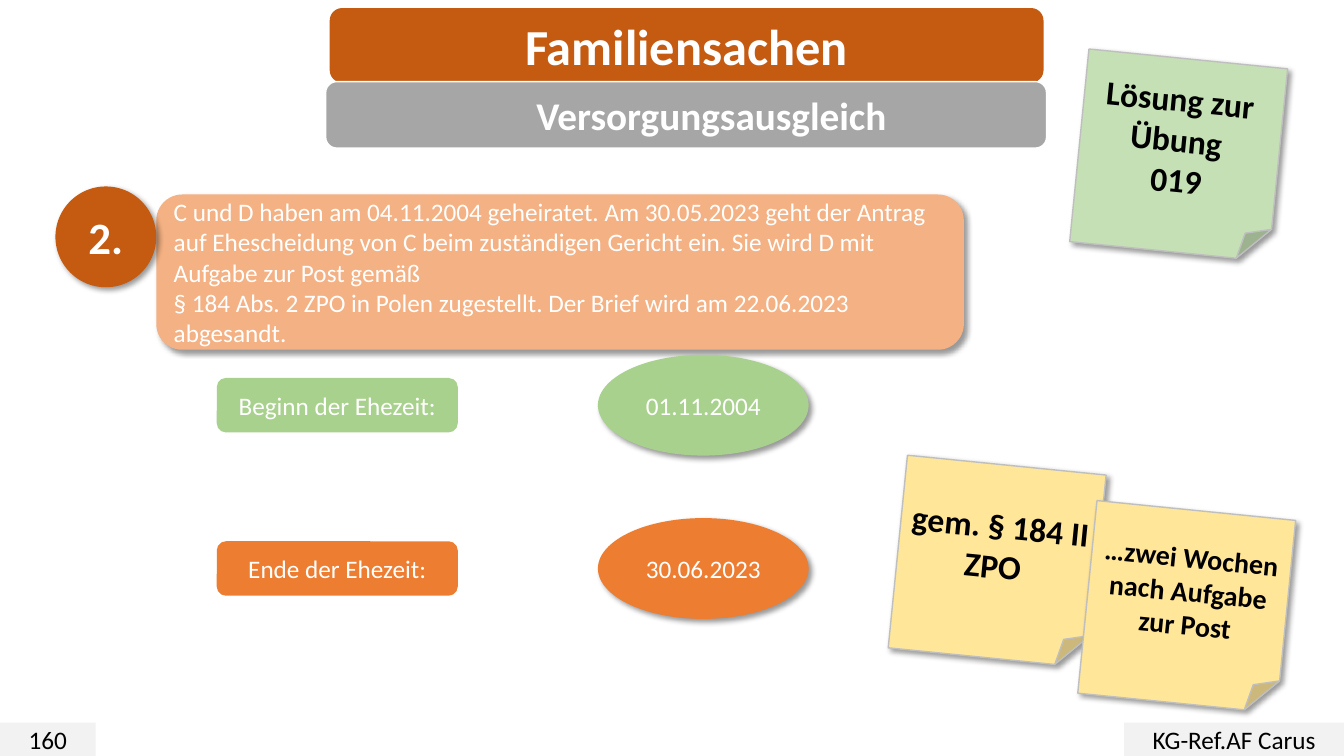
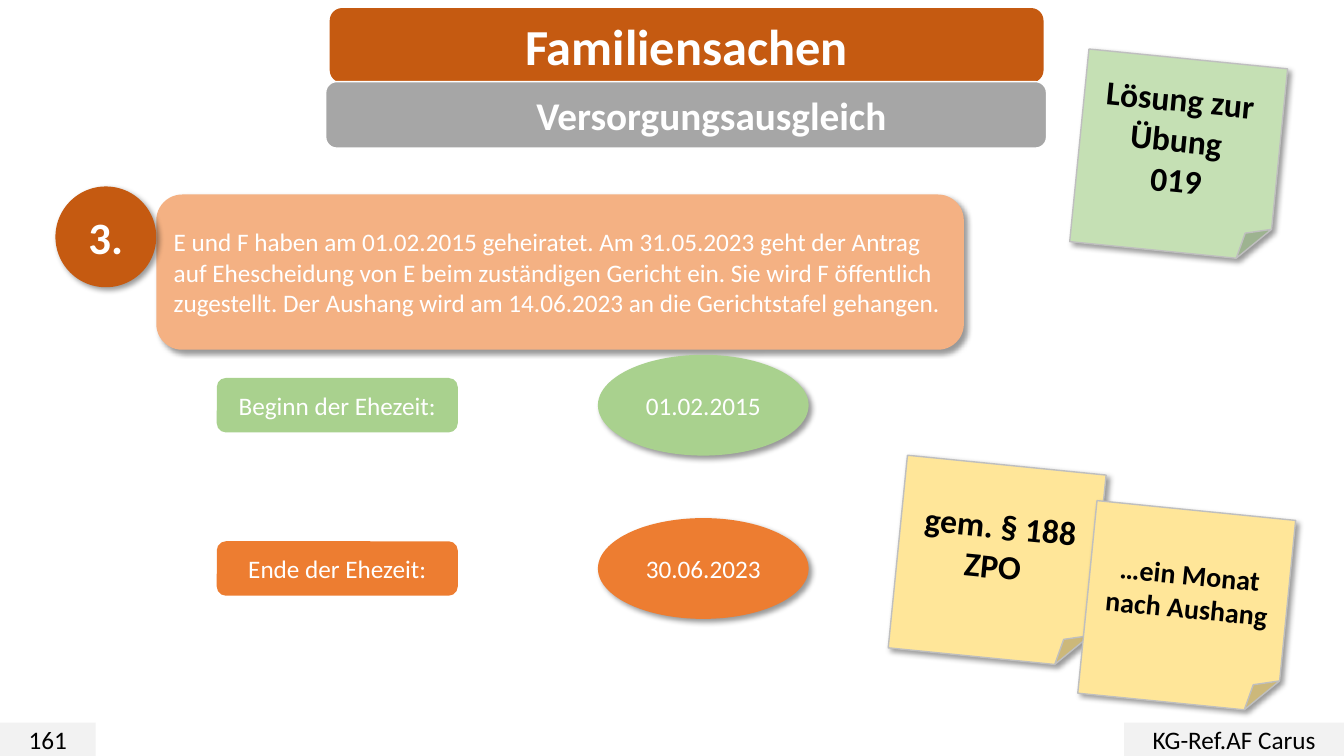
from lxml.etree import SubElement as Sub
from pptx import Presentation as Deck
from pptx.dml.color import RGBColor as RGB
from pptx.enum.shapes import MSO_SHAPE as Kind
from pptx.enum.text import MSO_ANCHOR as Anchor, PP_ALIGN as Align
from pptx.oxml.ns import qn
from pptx.util import Inches, Pt

WHITE = RGB(0xFF, 0xFF, 0xFF)
BLACK = RGB(0x00, 0x00, 0x00)
RUST = RGB(0xC5, 0x5A, 0x11)
GREY = RGB(0xA6, 0xA6, 0xA6)
PALE = RGB(0xF2, 0xF2, 0xF2)
EDGE = RGB(0xBF, 0xBF, 0xBF)
PEACH = RGB(0xF4, 0xB1, 0x83)
MINT = RGB(0xC5, 0xE0, 0xB4)
GREEN = RGB(0xA9, 0xD1, 0x8E)
ORANGE = RGB(0xED, 0x7D, 0x31)
YELLOW = RGB(0xFF, 0xE6, 0x99)


class Sheet:
    font = "Calibri"
    wide, high = 13.33, 7.5
    tilt = 5.7

    def __init__(self):
        self.deck = Deck()
        self.deck.slide_width = Inches(self.wide)
        self.deck.slide_height = Inches(self.high)

    def start(self, number):
        self.slide = self.deck.slides.add_slide(self.deck.slide_layouts[6])
        self.head("Familiensachen", "Versorgungsausgleich")
        self.foot(number, 0, 0.95)
        self.foot("KG-Ref.AF Carus", 11.15, 2.18)

    def shape(self, kind, spot, fill, text, size=18, color=WHITE, bold=False,
              align=Align.CENTER, line=None, shade=False):
        shape = self.slide.shapes.add_shape(kind, *map(Inches, spot))
        shape.shadow.inherit = False
        shape.fill.solid()
        shape.fill.fore_color.rgb = fill
        if line is None:
            shape.line.fill.background()
        else:
            shape.line.color.rgb = line
            shape.line.width = Pt(1)
        if shade:
            self.shade(shape)
        self.label(shape.text_frame, text, align,
                   {"name": self.font, "size": Pt(size), "bold": bold}, color)
        return shape

    def label(self, frame, text, align, style, color):
        frame.word_wrap = True
        frame.vertical_anchor = Anchor.MIDDLE
        lines = [text] if isinstance(text, str) else text
        for i, line in enumerate(lines):
            para = frame.add_paragraph() if i else frame.paragraphs[0]
            para.text = line
            para.alignment = align
            for run in para.runs:
                for key, value in style.items():
                    setattr(run.font, key, value)
                run.font.color.rgb = color

    def shade(self, shape):
        effects = shape._element.spPr.find(qn("a:effectLst"))
        cast = Sub(effects, qn("a:outerShdw"), blurRad=str(Pt(4)), dist=str(Pt(3)),
                   dir=str(45 * 60000), algn="tl", rotWithShape="0")
        tone = Sub(cast, qn("a:srgbClr"), val=str(BLACK))
        Sub(tone, qn("a:alpha"), val="40000")

    def head(self, title, topic):
        self.shape(Kind.ROUNDED_RECTANGLE, (3.27, 0.08, 7.08, 0.74), RUST, title,
                   size=36, bold=True)
        band = self.shape(Kind.ROUNDED_RECTANGLE, (3.23, 0.81, 7.15, 0.66), GREY,
                          topic, size=28, bold=True, line=WHITE)
        para = band.text_frame.paragraphs[0]
        para.level = 1
        para._p.get_or_add_pPr().set("marL", str(Inches(0.5)))

    def foot(self, text, left, width):
        self.shape(Kind.RECTANGLE, (left, 7.17, width, 0.33), PALE, text, color=BLACK)

    def note(self, text, left, top, fill=YELLOW, size=24):
        note = self.shape(Kind.FOLDED_CORNER, (left, top, 1.98, 1.92), fill, text,
                          size=size, color=BLACK, bold=True, line=EDGE, shade=True)
        note.rotation = self.tilt

    def case(self, number, text):
        box = self.shape(Kind.ROUNDED_RECTANGLE, (1.55, 1.93, 8.01, 1.54), PEACH,
                         text, align=Align.LEFT, shade=True)
        disc = self.shape(Kind.OVAL, (0.55, 1.85, 1, 1), RUST, number,
                          size=32, bold=True, shade=True)
        self.slide.shapes.add_group_shape([box, disc])

    def dates(self, begin, end):
        rows = (("Beginn der Ehezeit:", begin, GREEN), ("Ende der Ehezeit:", end, ORANGE))
        for i, (label, date, fill) in enumerate(rows):
            top = 3.52 + i * 1.62
            self.shape(Kind.ROUNDED_RECTANGLE, (2.15, top + 0.23, 2.39, 0.54), fill, label)
            self.shape(Kind.OVAL, (5.93, top, 2.09, 1), fill, date, shade=True)


CASES = (
    ("160", "2.",
     "C und D haben am 04.11.2004 geheiratet. Am 30.05.2023 geht der Antrag auf "
     "Ehescheidung von C beim zuständigen Gericht ein. Sie wird D mit Aufgabe zur "
     "Post gemäß \n§ 184 Abs. 2 ZPO in Polen zugestellt. Der Brief wird am "
     "22.06.2023 abgesandt.",
     ("01.11.2004", "30.06.2023"),
     "gem. § 184 II ZPO ", "…zwei Wochen nach Aufgabe zur Post"),
    ("161", "3.",
     "E und F haben am 01.02.2015 geheiratet. Am 31.05.2023 geht der Antrag auf "
     "Ehescheidung von E beim zuständigen Gericht ein. Sie wird F öffentlich "
     "zugestellt. Der Aushang wird am 14.06.2023 an die Gerichtstafel gehangen.",
     ("01.02.2015", "30.06.2023"),
     "gem. § 188 ZPO ", "…ein Monat nach Aushang"),
)


def main():
    sheet = Sheet()
    for page, number, text, dates, law, term in CASES:
        sheet.start(page)
        sheet.note(("Lösung zur ", "Übung ", "019"), 10.7, 0.58, fill=MINT)
        sheet.case(number, text)
        sheet.dates(*dates)
        sheet.note(law, 8.9, 4.61)
        sheet.note(term, 10.78, 5.06, size=20)
    sheet.deck.save("out.pptx")


if __name__ == "__main__":
    main()
